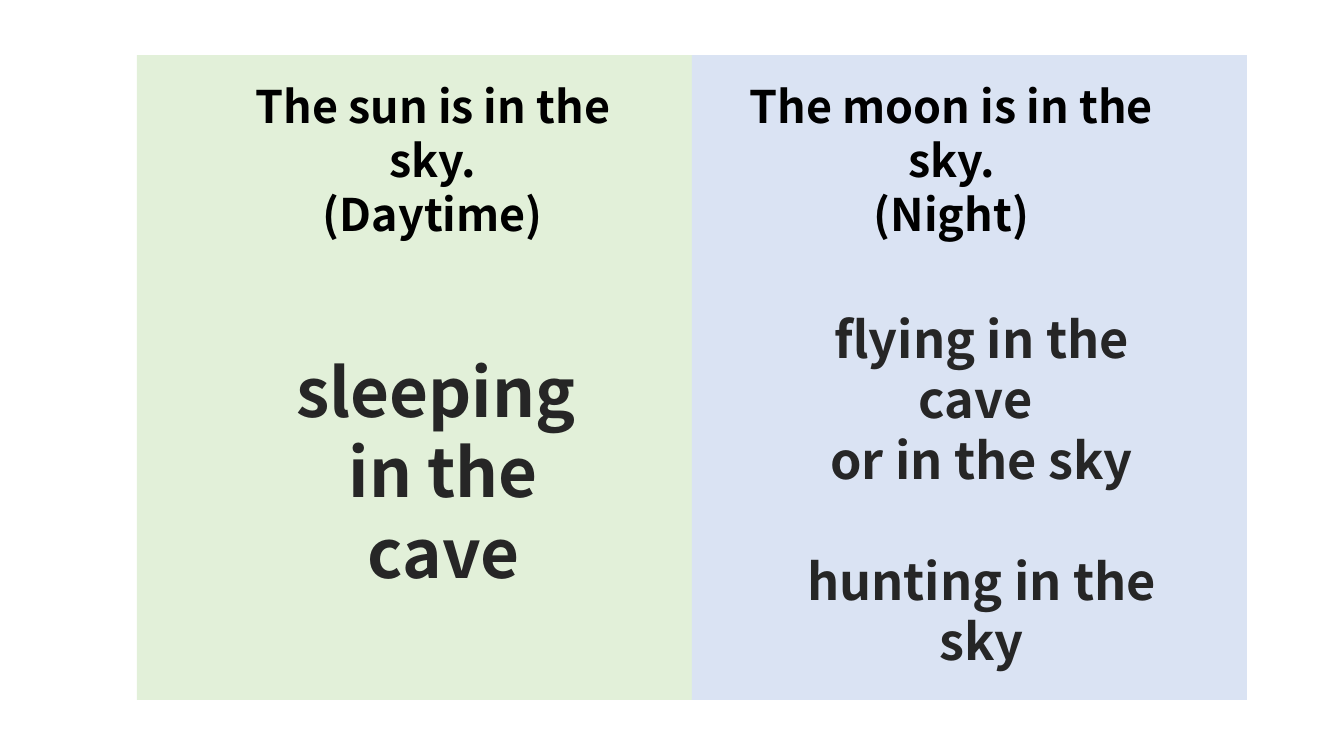
from lxml import etree
from pptx import Presentation, util as u
from pptx.dml.color import RGBColor
from pptx.enum import shapes, text
from pptx.oxml import ns

SCALE = 914400 / 100.8


def px(*vals):
    return [u.Emu(round(v * SCALE)) for v in vals]


def rgb(code):
    return RGBColor.from_string(code)


deck = Presentation()
deck.slide_width, deck.slide_height = px(1344, 756)
slide = deck.slides.add_slide(deck.slide_layouts.get_by_name("Comparison"))

# The layout's top title is not used
title = slide.shapes.title.element
title.getparent().remove(title)

# Two coloured halves, placed behind the text
for i, tint in enumerate(["E2F0D9", "DAE3F3"]):
    half = slide.shapes.add_shape(
        shapes.MSO_SHAPE.RECTANGLE, *px(137 + 555 * i, 55, 555, 645))
    half.shadow.inherit = False
    half.fill.solid()
    half.fill.fore_color.rgb = rgb(tint)
    half.line.fill.background()
    slide.shapes._spTree.insert(2 + i, half._element)

# Headings and answers: placeholder, box, size, colour, (line, gap in lines)
blocks = [
    (1, (212, 74, 442, 119), 32, "000000",
     [("The sun is in the sky.", 0), ("(Daytime)", 0)]),
    (2, (267, 345, 353, 173), 48, "262626",
     [("sleeping ", 0), ("in the cave", 0)]),
    (3, (706, 74, 491, 119), 32, "000000",
     [("The moon is in the sky.", 0), ("(Night)", 0)]),
    (4, (764, 303, 435, 254), 36, "262626",
     [("flying in the cave ", 0), ("or in the sky", 0),
      ("hunting in the sky", 1)]),
]
for idx, box, size, ink, lines in blocks:
    holder = slide.placeholders[idx]
    holder.left, holder.top, holder.width, holder.height = px(*box)
    frame = holder.text_frame
    frame.word_wrap = True
    frame.auto_size = text.MSO_AUTO_SIZE.NONE
    frame.vertical_anchor = text.MSO_ANCHOR.TOP
    frame.text = "\n".join(line for line, gap in lines)
    for para, (line, gap) in zip(frame.paragraphs, lines):
        pitch = 1.2 * size
        para.alignment = text.PP_ALIGN.CENTER
        para.line_spacing = u.Pt(pitch)
        para.space_before = u.Pt(pitch * gap)
        # No bullet or indent
        props = para._p.get_or_add_pPr()
        props.set("marL", "0")
        props.set("indent", "0")
        etree.SubElement(props, ns.qn("a:buNone"))
        para.font.name = "Noto Sans CJK SC"
        para.font.size = u.Pt(size)
        para.font.bold = True
        para.font.color.rgb = rgb(ink)

deck.save("out.pptx")
